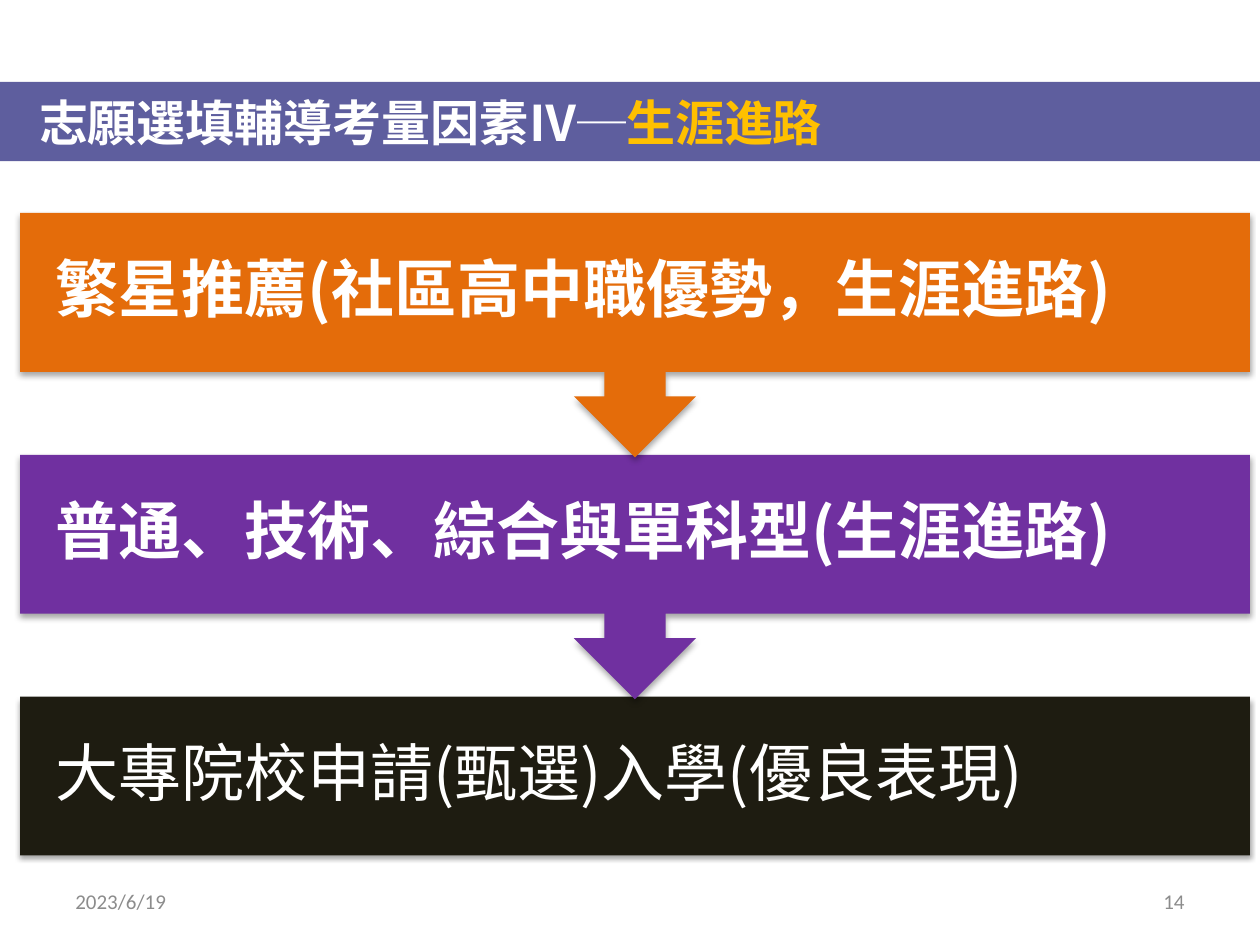
from dataclasses import dataclass

from lxml.etree import SubElement
from pptx import Presentation
from pptx.dml.color import RGBColor
from pptx.enum.shapes import MSO_SHAPE
from pptx.enum.text import MSO_ANCHOR, MSO_AUTO_SIZE, PP_ALIGN
from pptx.oxml.ns import qn
from pptx.util import Emu, Pt

PX = 9144


@dataclass(frozen=True)
class Theme:
    band: str = "000066"
    band_opacity: int = 63
    white: str = "FFFFFF"
    accent: str = "FFC000"
    orange: str = "E46C0A"
    purple: str = "7030A0"
    black: str = "1E1C11"
    grey: str = "8C8C8C"
    chinese: str = "Noto Sans CJK SC"
    latin: str = "Calibri"
    title_size: int = 28
    step_size: int = 36
    footer_size: int = 12


class SlideBuilder:
    def __init__(self, slide, theme):
        self.slide = slide
        self.theme = theme

    def box(self, *lengths):
        return [Emu(length * PX) for length in lengths]

    def format(self, paragraph, size, color, name, bold=False):
        font = paragraph.font
        font.size, font.bold = Pt(size), bold
        font.color.rgb = RGBColor.from_string(color)
        font.name = name
        SubElement(font._element, qn("a:ea"), typeface=name)

    def filled(self, kind, left, top, width, height, color):
        shape = self.slide.shapes.add_shape(kind, *self.box(left, top, width, height))
        shape.shadow.inherit = False
        shape.fill.solid()
        shape.fill.fore_color.rgb = RGBColor.from_string(color)
        shape.line.fill.background()
        return shape

    def band(self, left, top, width, height):
        shape = self.filled(MSO_SHAPE.RECTANGLE, left, top, width, height, self.theme.band)
        color = shape._element.spPr.find(f".//{qn('a:srgbClr')}")
        SubElement(color, qn("a:alpha"), val=str(self.theme.band_opacity * 1000))
        return shape

    def title(self, text, highlight, left, top, width, height, band):
        title = self.slide.shapes.title
        band._element.addnext(title._element)
        title.left, title.top, title.width, title.height = self.box(left, top, width, height)
        frame = title.text_frame
        frame.auto_size = MSO_AUTO_SIZE.NONE
        frame.vertical_anchor = MSO_ANCHOR.MIDDLE
        paragraph = frame.paragraphs[0]
        paragraph.alignment = PP_ALIGN.LEFT
        properties = paragraph._p.get_or_add_pPr()
        properties.set("marL", str(18 * PX))
        properties.set("indent", str(-18 * PX))
        self.format(paragraph, self.theme.title_size, self.theme.white, self.theme.chinese, True)
        paragraph.add_run().text = text
        run = paragraph.add_run()
        run.text = highlight
        run.font.color.rgb = RGBColor.from_string(self.theme.accent)

    def shadow(self, shape):
        effects = shape._element.spPr.find(qn("a:effectLst"))
        outer = SubElement(effects, qn("a:outerShdw"), blurRad=str(Pt(3.1)),
                           dist=str(Pt(1.8)), dir="5400000", rotWithShape="0")
        color = SubElement(outer, qn("a:srgbClr"), val="000000")
        SubElement(color, qn("a:alpha"), val="35000")

    def step(self, text, color, left, top, width, height, arrow=True, bold=True):
        kind = MSO_SHAPE.DOWN_ARROW_CALLOUT if arrow else MSO_SHAPE.RECTANGLE
        shape = self.filled(kind, left, top, width, height, color)
        if arrow:
            shape.adjustments[3] = 0.65
        self.shadow(shape)
        frame = shape.text_frame
        frame.word_wrap = True
        frame.vertical_anchor = MSO_ANCHOR.MIDDLE
        frame.margin_left = frame.margin_right = Emu(28 * PX)
        frame.margin_top = frame.margin_bottom = Emu(28 * PX)
        paragraph = frame.paragraphs[0]
        paragraph.text = text
        paragraph.alignment = PP_ALIGN.LEFT
        paragraph.line_spacing = 0.9
        self.format(paragraph, self.theme.step_size, self.theme.white, self.theme.chinese, bold)

    def footer(self, text, left, top, width, height, alignment):
        shape = self.slide.shapes.add_textbox(*self.box(left, top, width, height))
        frame = shape.text_frame
        frame.word_wrap = True
        frame.vertical_anchor = MSO_ANCHOR.MIDDLE
        paragraph = frame.paragraphs[0]
        paragraph.text = text
        paragraph.alignment = alignment
        self.format(paragraph, self.theme.footer_size, self.theme.grey, self.theme.latin)


def main():
    presentation = Presentation()
    presentation.slide_width, presentation.slide_height = Emu(1000 * PX), Emu(750 * PX)
    theme = Theme()
    builder = SlideBuilder(presentation.slides.add_slide(presentation.slide_layouts[5]), theme)

    band = builder.band(-2, 65, 1002, 63)
    builder.title("志願選填輔導考量因素Ⅳ─", "生涯進路", 21, 68, 977, 57, band)

    steps = [
        ("繁星推薦(社區高中職優勢，生涯進路)", theme.orange),
        ("普通、技術、綜合與單科型(生涯進路)", theme.purple),
        ("大專院校申請(甄選)入學(優良表現)", theme.black),
    ]
    last = len(steps) - 1
    for index, (text, color) in reversed(list(enumerate(steps))):
        leads_on = index < last
        builder.step(text, color, 16, 169 + 192 * index, 976, 194 if leads_on else 126,
                     arrow=leads_on, bold=leads_on)

    builder.footer("2023/6/19", 50, 695, 233, 40, PP_ALIGN.LEFT)
    builder.footer("14", 717, 695, 233, 40, PP_ALIGN.RIGHT)
    presentation.save("out.pptx")


if __name__ == "__main__":
    main()
